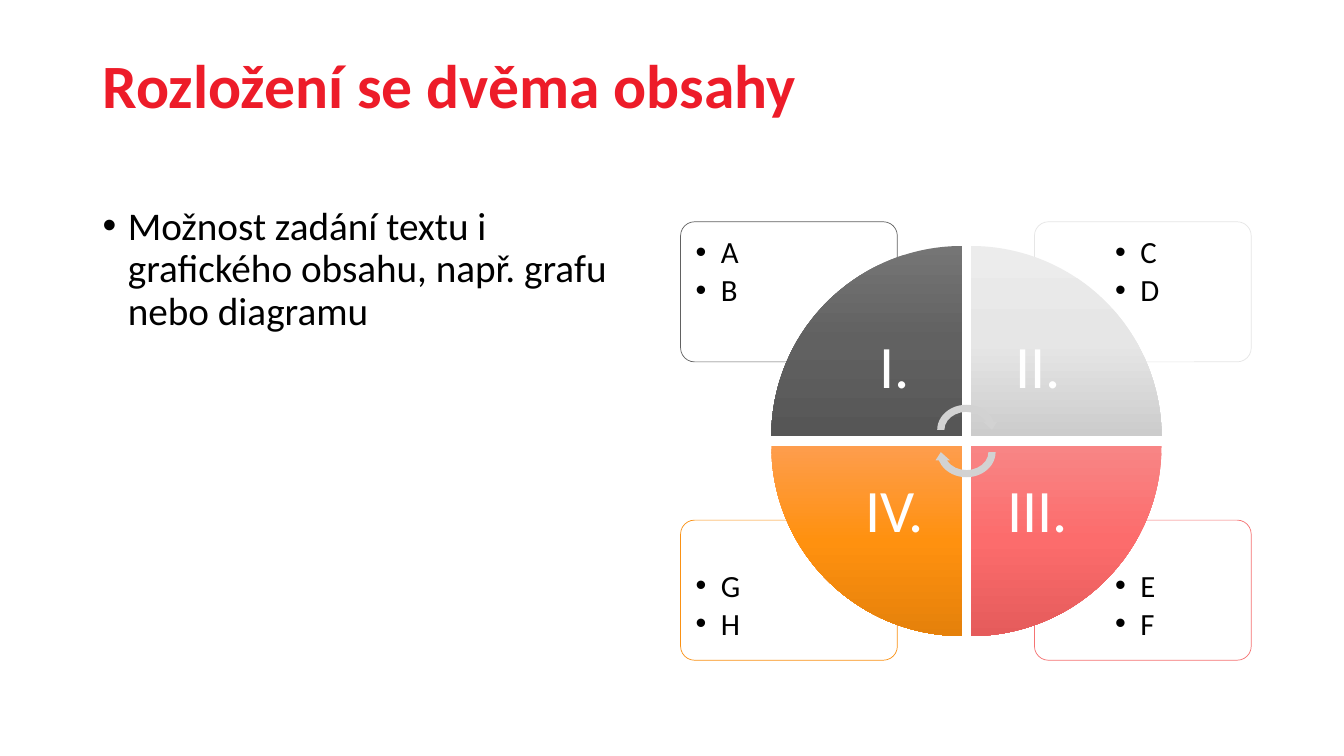
from dataclasses import dataclass

from lxml.etree import SubElement
from pptx import Presentation
from pptx.dml.color import RGBColor
from pptx.enum.shapes import MSO_SHAPE as Preset
from pptx.enum.text import MSO_ANCHOR as Anchor, PP_ALIGN as Align
from pptx.oxml import parse_xml
from pptx.oxml.ns import nsdecls, qn
from pptx.util import Inches, Pt


@dataclass(frozen=True)
class Theme:
    font: str = "Calibri"
    red: str = "ED1C29"
    black: str = "000000"
    white: str = "FFFFFF"
    arrow: str = "D2D2D2"
    title_size: int = 44
    body_size: int = 28
    note_size: int = 22
    numeral_size: int = 43


theme = Theme()
deck = Presentation()
deck.slide_width, deck.slide_height = Inches(13.33), Inches(7.5)
page = deck.slides.add_slide(deck.slide_layouts[6])


def add_shape(preset, left, top, width, height, rotation=0):
    shape = page.shapes.add_shape(
        preset, Inches(left), Inches(top), Inches(width), Inches(height))
    shape.shadow.inherit = False
    shape.line.fill.background()
    shape.rotation = rotation
    return shape


def add_text(place, lines, size, color, inset=(0.1, 0.05), anchor=Anchor.TOP,
             align=Align.LEFT, bold=False, bullet=False, after=0):
    box = page.shapes.add_textbox(*[Inches(value) for value in place])
    frame = box.text_frame
    frame.word_wrap = True
    frame.vertical_anchor = anchor
    frame.margin_left = frame.margin_right = Inches(inset[0])
    frame.margin_top = frame.margin_bottom = Inches(inset[1])
    for index, line in enumerate(lines):
        para = frame.paragraphs[0] if index == 0 else frame.add_paragraph()
        para.alignment = align
        para.line_spacing = 0.9
        para.space_after = Pt(after)
        if bullet:
            properties = para._p.get_or_add_pPr()
            properties.set("marL", str(Inches(0.25)))
            properties.set("indent", str(Inches(-0.25)))
            SubElement(properties, qn("a:buFont"), typeface="Arial")
            SubElement(properties, qn("a:buChar"), char="•")
        span = para.add_run()
        span.text = line
        span.font.name = theme.font
        span.font.size = Pt(size)
        span.font.bold = bold
        span.font.color.rgb = RGBColor.from_string(color)


# Title and body text
add_text((0.92, 0.37, 11.5, 1.01), ["Rozložení se dvěma obsahy"],
         theme.title_size, theme.red, anchor=Anchor.MIDDLE, bold=True)
add_text((0.92, 2, 5.67, 4.76),
         ["Možnost zadání textu i grafického obsahu, např. grafu nebo diagramu"],
         theme.body_size, theme.black, bullet=True)

# Quadrants, clockwise: column, row, numeral, notes, outline, gradient
quadrants = [
    (0, 0, "I.", "AB", "616161", ("757575", "616161", "565656")),
    (1, 0, "II.", "CD", "E6E6E6", ("ECECEC", "E6E6E6", "CCCCCC")),
    (1, 1, "III.", "EF", "F57373", ("F88585", "FC6C6C", "E55B5B")),
    (0, 1, "IV.", "GH", "FA9114", ("FE9D4D", "FF910F", "E5810B")),
]

# Note cards behind the circle
for column, row, numeral, notes, outline, shades in quadrants:
    card = add_shape(Preset.ROUNDED_RECTANGLE,
                     (6.75, 10.26)[column], (2.2, 5.16)[row], 2.15, 1.39)
    card.adjustments[0] = 0.1
    card.fill.solid()
    card.fill.fore_color.rgb = RGBColor.from_string(theme.white)
    card_color = card._element.spPr.find(qn("a:solidFill"))[0]
    SubElement(card_color, qn("a:alpha"), val="90000")
    card.line.color.rgb = RGBColor.from_string(outline)
    card.line.width = Pt(0.5)
    add_text(((6.78, 10.94)[column], (2.23, 5.54)[row], 1.45, 0.98), notes,
             theme.note_size, theme.black, inset=(0.12, 0.12), bullet=True,
             after=theme.note_size * 0.15)

# Wedges of the circle, each turned a quarter further
for turn, (column, row, numeral, notes, outline, shades) in enumerate(quadrants):
    wedge = add_shape(Preset.PIE_WEDGE, 7.65 + 1.98 * column,
                      2.44 + 1.98 * row, 1.89, 1.89, rotation=90 * turn)
    stops = "".join(
        f'<a:gs pos="{index * 50000}"><a:srgbClr val="{shade}"/></a:gs>'
        for index, shade in enumerate(shades))
    gradient = parse_xml(
        f'<a:gradFill {nsdecls("a")} rotWithShape="0"><a:gsLst>{stops}</a:gsLst>'
        '<a:lin ang="5400000" scaled="0"/></a:gradFill>')
    wedge._element.spPr.find(qn("a:prstGeom")).addnext(gradient)
    add_text(((8.21, 9.63)[column], (3, 4.42)[row], 1.33, 1.33), [numeral],
             theme.numeral_size, theme.white, inset=(0.33, 0.33),
             anchor=Anchor.MIDDLE, align=Align.CENTER)

# Circular arrows in the centre
for top, rotation in ((3.98, 0), (4.2, 180)):
    arrow = add_shape(Preset.CIRCULAR_ARROW, 9.26, top, 0.65, 0.57, rotation)
    arrow.fill.solid()
    arrow.fill.fore_color.rgb = RGBColor.from_string(theme.arrow)

deck.save("out.pptx")
